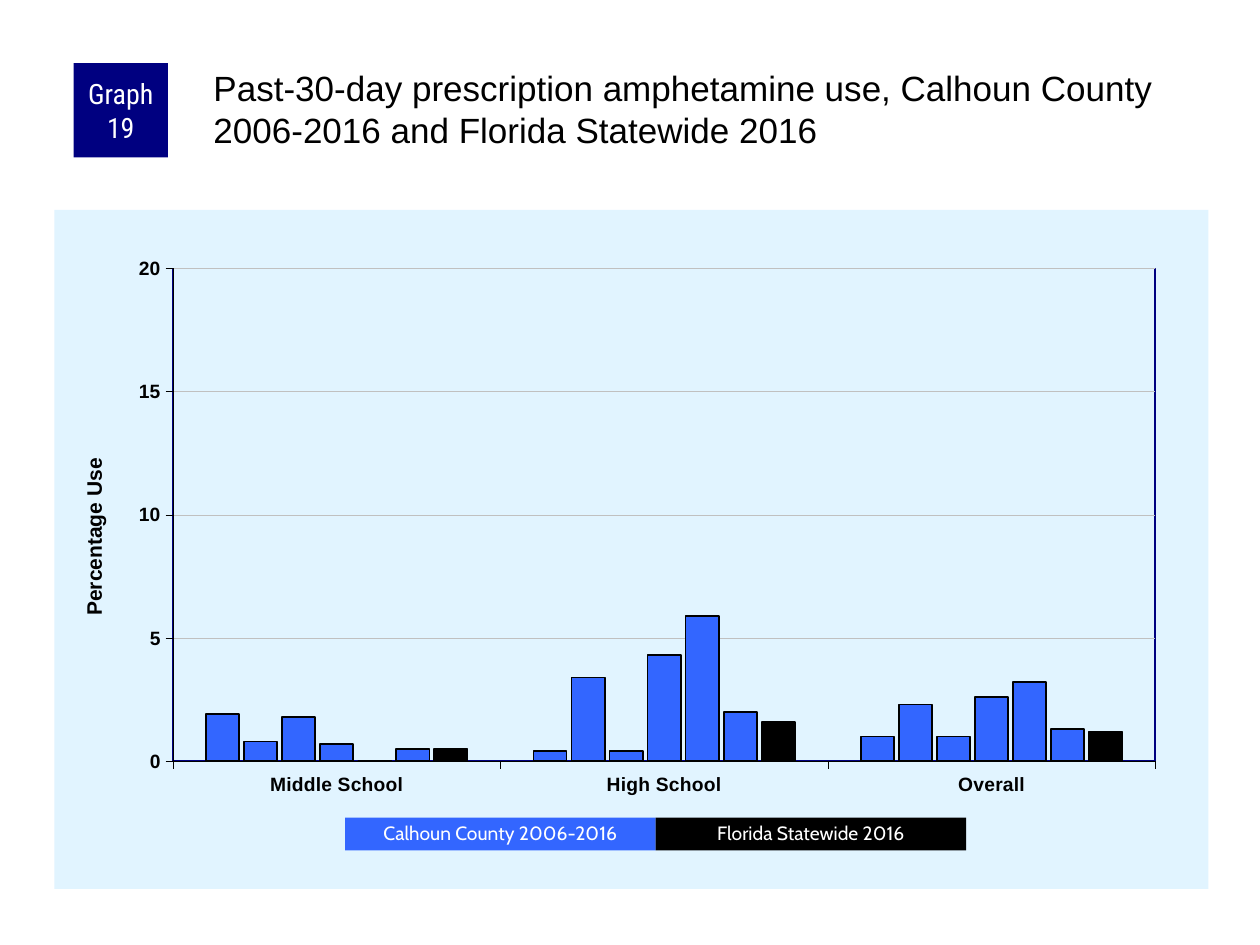
from lxml import etree
from pptx import Presentation
from pptx.chart.data import CategoryChartData
from pptx.dml.color import RGBColor
from pptx.enum.chart import XL_CHART_TYPE, XL_TICK_MARK
from pptx.enum.shapes import MSO_SHAPE
from pptx.enum.text import MSO_ANCHOR, PP_ALIGN
from pptx.oxml import parse_xml
from pptx.oxml.ns import nsdecls, qn
from pptx.util import Pt

COLUMNS = XL_CHART_TYPE.COLUMN_CLUSTERED
OUTSIDE = XL_TICK_MARK.OUTSIDE
RECT = MSO_SHAPE.RECTANGLE
TOP, MIDDLE = MSO_ANCHOR.TOP, MSO_ANCHOR.MIDDLE
LEFT, CENTER = PP_ALIGN.LEFT, PP_ALIGN.CENTER

TITLE = "Past-30-day prescription amphetamine use, Calhoun County 2006-2016 and Florida Statewide 2016"
BADGE = "Graph 19"
AXIS_TITLE = "Percentage Use"
SCHOOLS = ["Middle School", "High School", "Overall"]
COUNTY = [(1.9, 0.4, 1), (0.8, 3.4, 2.3), (1.8, 0.4, 1),
          (0.7, 4.3, 2.6), (0, 5.9, 3.2), (0.5, 2, 1.3)]
STATE = [(0.5, 1.6, 1.2)]
LEGEND = [("Calhoun County 2006-2016", "county"), ("Florida Statewide 2016", "state")]

THEME = {
    "colors": {"county": "3366FF", "state": "000000", "ink": "000000", "paper": "FFFFFF",
               "navy": "000080", "panel": "E1F4FF", "grid": "C0C0C0"},
    "title": {"name": "Arial", "size": Pt(20), "color": "ink"},
    "badge": {"name": "Roboto Condensed", "size": Pt(16), "color": "paper"},
    "legend": {"name": "Cabin", "size": Pt(11), "color": "paper"},
    "chart": {"name": "Arial", "size": Pt(8), "color": "ink"},
    "axis": {"name": "Arial", "size": Pt(11), "bold": True, "color": "ink"},
    "axis_title": {"name": "Arial", "size": Pt(12), "bold": True, "color": "ink"},
}
PANEL = (31, 120, 659.5, 388)
PLOT = {"x": 0.103, "y": 0.086, "w": 0.851, "h": 0.726}
AXIS_TITLE_AT = {"x": 0.02, "y": 0.36}
LEGEND_LEFT, LEGEND_TOP, LEGEND_W, LEGEND_H = 197.3, 467.3, 177.4, 18.7


def rgb(name):
    return RGBColor.from_string(THEME["colors"][name])


def style_font(font, style):
    for key, value in THEME[style].items():
        if key == "color":
            font.color.rgb = rgb(value)
        else:
            setattr(font, key, value)


def style_line(line, color, width):
    line.color.rgb = rgb(color)
    line.width = Pt(width)


def write(sp, text, style, align=LEFT, anchor=TOP, margins=(7.2, 3.6, 7.2, 3.6), spacing=None):
    tf = sp.text_frame
    tf.word_wrap = True
    tf.vertical_anchor = anchor
    for side, value in zip(("left", "top", "right", "bottom"), margins):
        setattr(tf, f"margin_{side}", Pt(value))
    p = tf.paragraphs[0]
    p.alignment = align
    p.line_spacing = spacing
    r = p.add_run()
    r.text = text
    style_font(r.font, style)


def add_box(s, box, fill, text, style, **layout):
    sp = s.shapes.add_shape(RECT, *map(Pt, box))
    sp.shadow.inherit = False
    sp.fill.solid()
    sp.fill.fore_color.rgb = rgb(fill)
    sp.line.fill.background()
    write(sp, text, style, CENTER, MIDDLE, **layout)


def set_layout(parent, position, index, inner=False):
    for old in parent.findall(qn("c:layout")):
        parent.remove(old)
    layout = parse_xml(f'<c:layout {nsdecls("c")}><c:manualLayout/></c:layout>')
    entries = [("layoutTarget", "inner")] if inner else []
    entries += [(f"{key}Mode", "edge") for key in "xy"]
    entries += position.items()
    for tag, value in entries:
        etree.SubElement(layout[0], qn(f"c:{tag}")).set("val", str(value))
    parent.insert(index, layout)


def area_format(fill, line):
    return parse_xml(f'<c:spPr {nsdecls("c", "a")}>{fill}{line}</c:spPr>')


def solid(name):
    return f'<a:solidFill><a:srgbClr val="{THEME["colors"][name]}"/></a:solidFill>'


def add_usage_chart(s):
    data = CategoryChartData()
    data.categories = SCHOOLS
    for number, values in enumerate(COUNTY + STATE, 1):
        data.add_series(f"Series {number}", values)
    chart = s.shapes.add_chart(COLUMNS, *map(Pt, PANEL), data).chart
    chart.has_title = chart.has_legend = False
    style_font(chart.font, "chart")

    plot = chart.plots[0]
    plot.gap_width, plot.overlap, plot.vary_by_categories = 200, -15, False
    colors = ["county"] * len(COUNTY) + ["state"] * len(STATE)
    for series, color in zip(plot.series, colors):
        series.invert_if_negative = False
        series.format.fill.solid()
        series.format.fill.fore_color.rgb = rgb(color)
        style_line(series.format.line, "ink", 1)

    for axis in (chart.category_axis, chart.value_axis):
        axis.major_tick_mark = OUTSIDE
        style_font(axis.tick_labels.font, "axis")
        style_line(axis.format.line, "ink", 0.25)
    axis = chart.value_axis
    axis.minimum_scale, axis.maximum_scale, axis.major_unit = 0, 20, 5
    axis.has_major_gridlines = True
    style_line(axis.major_gridlines.format.line, "grid", 0.25)
    title = axis.axis_title
    p = title.text_frame.paragraphs[0]
    r = p.add_run()
    r.text = AXIS_TITLE
    style_font(r.font, "axis_title")
    body = title.text_frame._txBody.find(qn("a:bodyPr"))
    body.set("rot", "-5400000")
    body.set("vert", "horz")
    set_layout(title._element, AXIS_TITLE_AT, 1)

    space = chart._chartSpace
    area = space.chart.plotArea
    set_layout(area, PLOT, 0, inner=True)
    area.append(area_format("<a:noFill/>", f'<a:ln w="{Pt(1)}">{solid("navy")}</a:ln>'))
    space.chart.addnext(area_format(solid("panel"), "<a:ln><a:noFill/></a:ln>"))


def main():
    prs = Presentation()
    prs.slide_width, prs.slide_height = Pt(720), Pt(540)
    s = prs.slides.add_slide(prs.slide_layouts[6])
    add_usage_chart(s)
    add_box(s, (42, 36, 54, 54), "navy", BADGE, "badge", margins=(3.6, 0, 3.6, 0))
    heading = s.shapes.add_textbox(*map(Pt, (120, 36, 570, 60)))
    write(heading, TITLE, "title", margins=(2, 2, 0, 0))
    for i, (label, color) in enumerate(LEGEND):
        box = (LEGEND_LEFT + i * LEGEND_W, LEGEND_TOP, LEGEND_W, LEGEND_H)
        add_box(s, box, color, label, "legend", spacing=0.9)
    prs.save("out.pptx")


if __name__ == "__main__":
    main()
